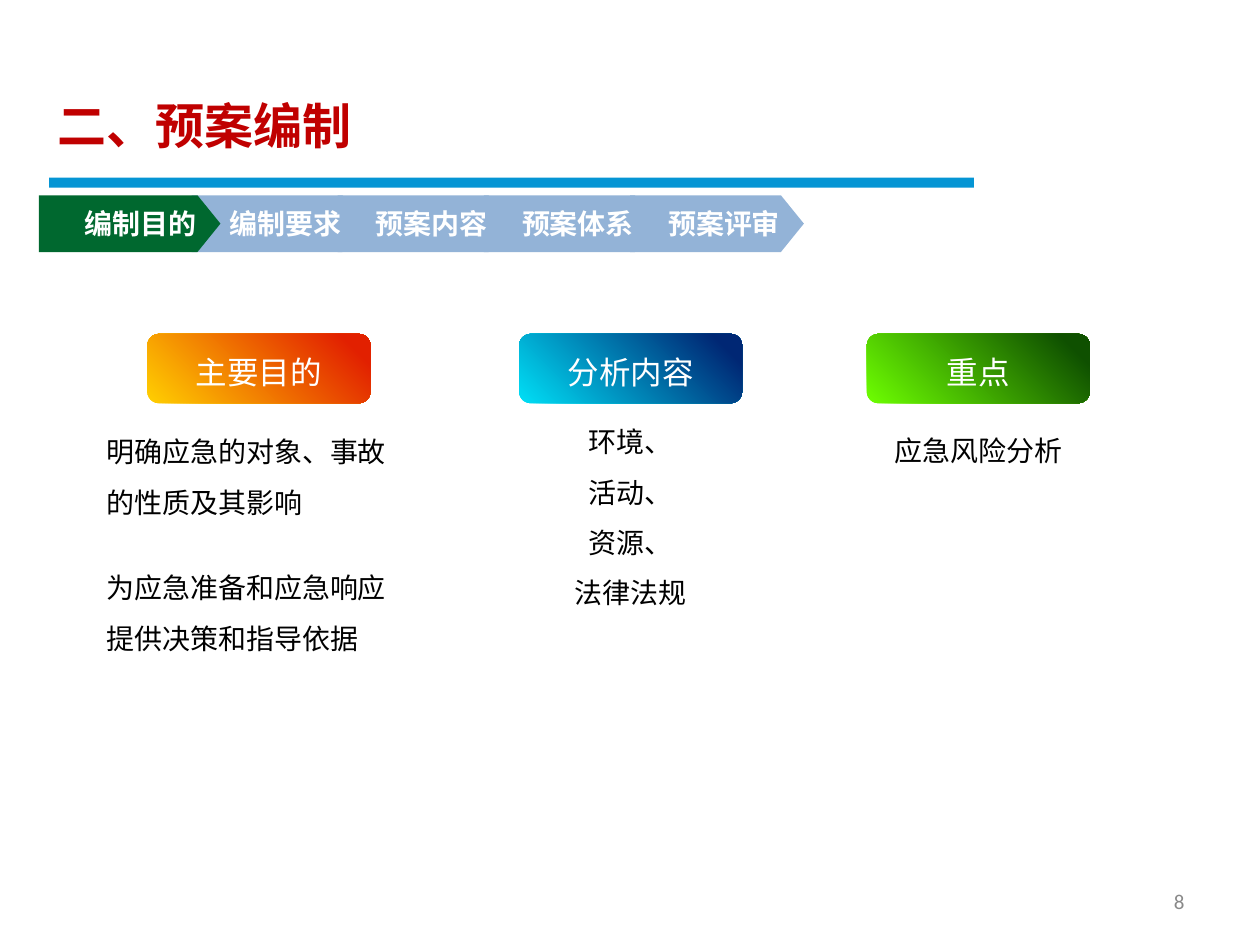
"""Build the slide on drawing up an emergency plan."""
from dataclasses import dataclass

from lxml import etree
from pptx import Presentation
from pptx.dml.color import RGBColor
from pptx.enum.shapes import MSO_SHAPE
from pptx.enum.text import MSO_ANCHOR, MSO_AUTO_SIZE, PP_ALIGN
from pptx.oxml.ns import qn
from pptx.util import Inches, Pt

RECTANGLE = MSO_SHAPE.RECTANGLE
ROUNDED = MSO_SHAPE.ROUNDED_RECTANGLE
PENTAGON = MSO_SHAPE.PENTAGON
TOP, MIDDLE = MSO_ANCHOR.TOP, MSO_ANCHOR.MIDDLE
LEFT, CENTER, RIGHT = PP_ALIGN.LEFT, PP_ALIGN.CENTER, PP_ALIGN.RIGHT
FIXED, GROW = MSO_AUTO_SIZE.NONE, MSO_AUTO_SIZE.SHAPE_TO_FIT_TEXT

WHITE = RGBColor(0xFF, 0xFF, 0xFF)
BLACK = RGBColor(0x00, 0x00, 0x00)
RED = RGBColor(0xC0, 0x00, 0x00)
GRAY = RGBColor(0x89, 0x89, 0x89)
RULE_BLUE = RGBColor(0x05, 0x95, 0xD4)
STEP_BLUE = RGBColor(0x93, 0xB3, 0xD7)
STEP_GREEN = RGBColor(0x00, 0x68, 0x2F)
YELLOW = RGBColor(0xFF, 0xCF, 0x01)
ORANGE = RGBColor(0xE2, 0x20, 0x00)
CYAN = RGBColor(0x00, 0xDF, 0xF6)
NAVY = RGBColor(0x00, 0x27, 0x74)
LIME = RGBColor(0x6E, 0xFF, 0x01)
FOREST = RGBColor(0x0F, 0x50, 0x00)

CHINESE_FONT = "Noto Sans CJK SC"
NUMBER_FONT = "Calibri"


@dataclass(frozen=True)
class Area:
    left: float
    top: float
    width: float
    height: float

    def lengths(self) -> list:
        return [Inches(value) for value in (self.left, self.top, self.width, self.height)]


@dataclass(frozen=True)
class Style:
    size: int
    color: RGBColor
    bold: bool = False
    align: int = LEFT
    spacing: float = 1.0
    anchor: int = TOP
    grow: bool = True
    wrap: bool = True
    font: str = CHINESE_FONT


@dataclass(frozen=True)
class Body:
    area: Area
    lines: tuple
    style: Style


@dataclass(frozen=True)
class Topic:
    title: str
    left: float
    start: RGBColor
    end: RGBColor
    bodies: tuple


TITLE = Style(28, RED, bold=True, anchor=MIDDLE, grow=False)
STEP = Style(16, WHITE, bold=True, align=RIGHT, anchor=MIDDLE, grow=False, wrap=False)
BADGE = Style(18, WHITE, align=CENTER)
BODY = Style(16, BLACK, spacing=1.5)
LIST = Style(16, BLACK, align=CENTER, spacing=1.5)
SINGLE = Style(16, BLACK, align=CENTER)
NUMBER = Style(12, GRAY, align=RIGHT, anchor=MIDDLE, grow=False, font=NUMBER_FONT)

STEPS = ("编制目的", "编制要求", "预案内容", "预案体系", "预案评审")
STEP_LEFT, STEP_PITCH = 0.36, 1.16
TOPICS = (
    Topic("主要目的", 1.17, YELLOW, ORANGE, (
        Body(Area(0.75, 3.27, 2.49, 0.86), ("明确应急的对象、事故的性质及其影响",), BODY),
        Body(Area(0.75, 4.35, 2.49, 0.86), ("为应急准备和应急响应提供决策和指导依据",), BODY),
    )),
    Topic("分析内容", 4.12, CYAN, NAVY, (
        Body(Area(3.76, 3.19, 2.49, 1.67), ("环境、", "活动、", "资源、", "法律法规"), LIST),
    )),
    Topic("重点", 6.88, LIME, FOREST, (
        Body(Area(6.52, 3.39, 2.49, 0.37), ("应急风险分析",), SINGLE),
    )),
)


def set_all(target, values: dict) -> None:
    """Set every named attribute on the target."""
    for name, value in values.items():
        setattr(target, name, value)


def write(box, lines: tuple, style: Style) -> None:
    """Write one paragraph per line in the given style."""
    frame = box.text_frame
    set_all(frame, {
        "word_wrap": style.wrap,
        "vertical_anchor": style.anchor,
        "auto_size": GROW if style.grow else FIXED,
    })
    for index, line in enumerate(lines):
        para = frame.add_paragraph() if index else frame.paragraphs[0]
        set_all(para, {"alignment": style.align, "line_spacing": style.spacing})
        span = para.add_run()
        span.text = line
        set_all(span.font, {"name": style.font, "size": Pt(style.size), "bold": style.bold})
        span.font.color.rgb = style.color
        east_asian = etree.SubElement(span.font._element, qn("a:ea"))
        east_asian.set("typeface", style.font)


def add_text(page, area: Area, lines: tuple, style: Style) -> None:
    """Add a text box."""
    write(page.shapes.add_textbox(*area.lengths()), lines, style)


def add_plain(page, kind: int, area: Area):
    """Add a shape without line, shadow or fill."""
    shape = page.shapes.add_shape(kind, *area.lengths())
    shape.shadow.inherit = False
    shape.line.fill.background()
    shape.fill.background()
    return shape


def add_solid(page, kind: int, area: Area, color: RGBColor):
    """Add a shape with one fill colour."""
    shape = add_plain(page, kind, area)
    shape.fill.solid()
    shape.fill.fore_color.rgb = color
    return shape


def add_step(page, index: int, label: str) -> None:
    """Add one arrow of the step bar, the first one highlighted."""
    left = STEP_LEFT + index * STEP_PITCH
    area = Area(left, 1.55, 1.38, 0.45) if index else Area(0.31, 1.55, 1.44, 0.45)
    arrow = add_solid(page, PENTAGON, area, STEP_BLUE if index else STEP_GREEN)
    arrow.adjustments[0] = 0.405
    write(arrow, (label,), STEP)


def add_topic(page, topic: Topic) -> None:
    """Add a gradient badge, its title and the texts below it."""
    badge = add_plain(page, ROUNDED, Area(topic.left, 2.65, 1.77, 0.55))
    badge.fill.gradient()
    badge.fill.gradient_angle = 45
    stops = zip(badge.fill.gradient_stops, (topic.start, topic.end), (0, 0.9))
    for stop, color, position in stops:
        stop.color.rgb = color
        stop.position = position
    title = add_plain(page, ROUNDED, Area(topic.left + 0.1, 2.73, 1.57, 0.45))
    write(title, (topic.title,), BADGE)
    for body in topic.bodies:
        add_text(page, body.area, body.lines, body.style)


def main() -> None:
    """Build and save the deck."""
    deck = Presentation()
    set_all(deck, {"slide_width": Inches(10), "slide_height": Inches(7.5)})
    page = deck.slides.add_slide(deck.slide_layouts[6])
    add_solid(page, RECTANGLE, Area(0.39, 1.41, 7.34, 0.08), RULE_BLUE)
    for topic in TOPICS:
        add_topic(page, topic)
    add_text(page, Area(0.36, 0.6, 2.83, 0.79), ("二、预案编制",), TITLE)
    for index, label in reversed(list(enumerate(STEPS))):
        add_step(page, index, label)
    add_text(page, Area(7.17, 6.95, 2.33, 0.4), ("8",), NUMBER)
    deck.save("out.pptx")


if __name__ == "__main__":
    main()
